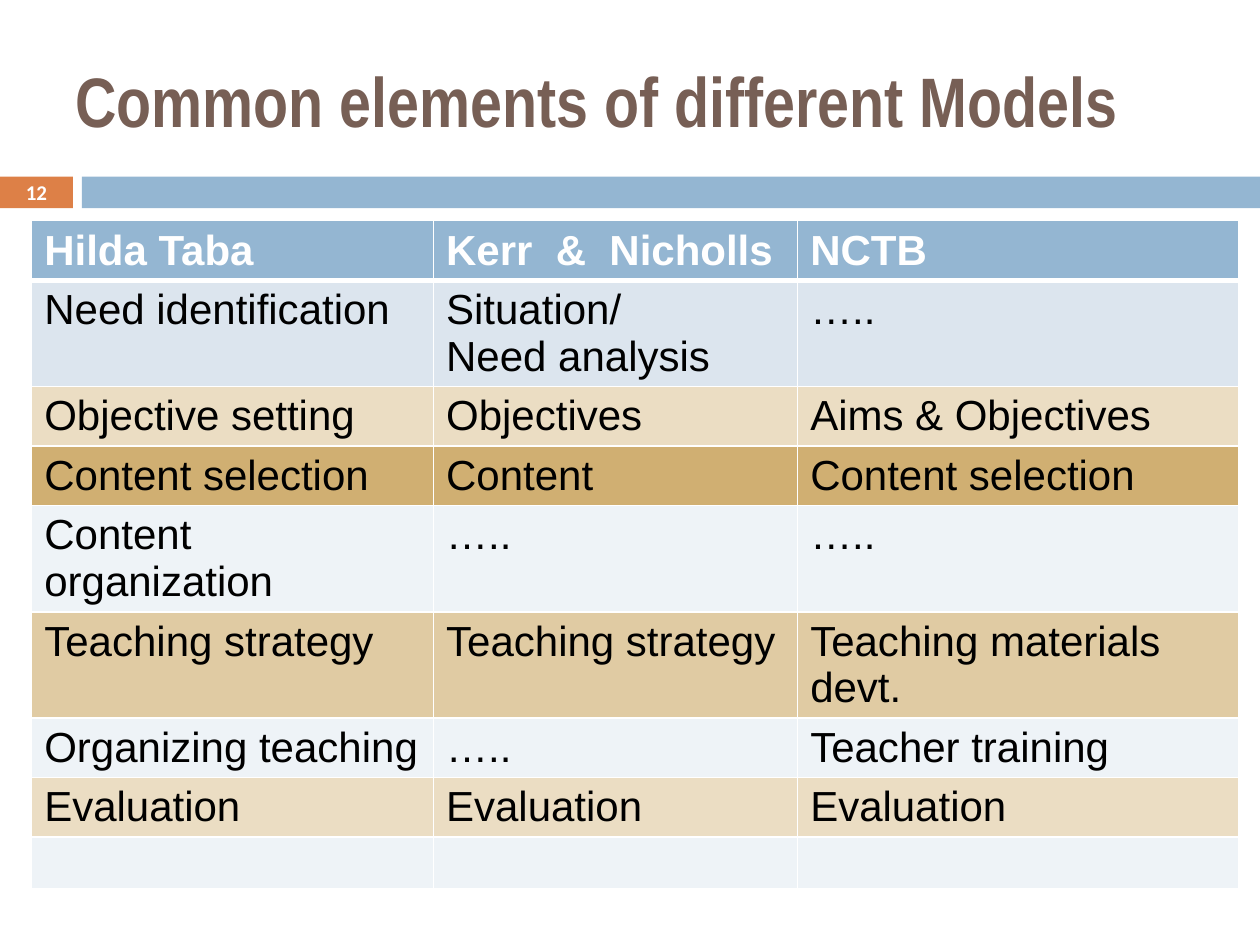
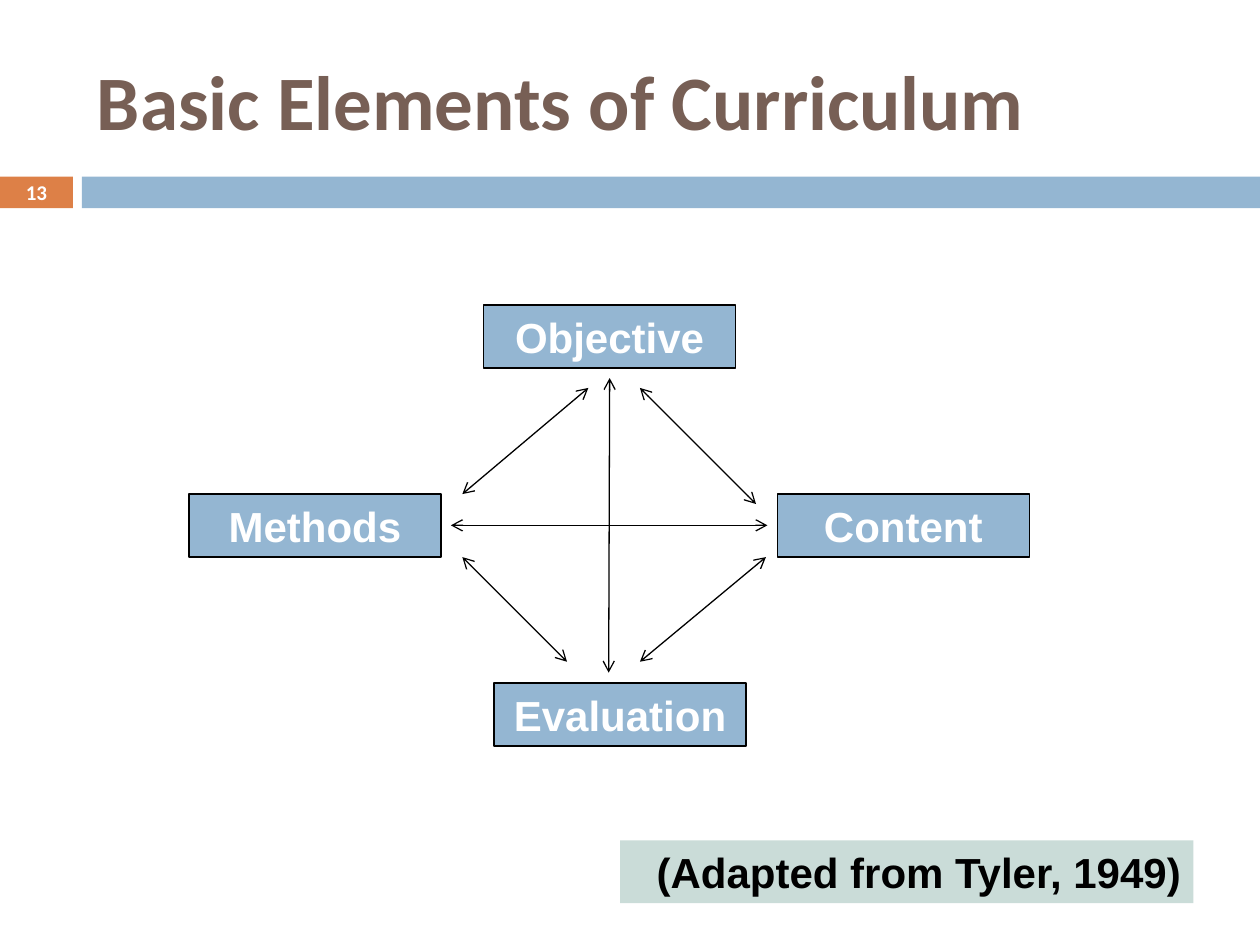
from dataclasses import dataclass
from typing import NamedTuple

from lxml.etree import SubElement
from pptx import Presentation
from pptx.dml.color import RGBColor
from pptx.enum.shapes import MSO_CONNECTOR, MSO_SHAPE
from pptx.enum.text import MSO_ANCHOR, MSO_AUTO_SIZE, PP_ALIGN
from pptx.oxml.ns import qn
from pptx.slide import Slide
from pptx.util import Cm, Pt


@dataclass(frozen=True)
class Theme:
    blue: str = "94B6D2"
    orange: str = "DD8047"
    brown: str = "775F55"
    mint: str = "CADCD8"
    mist: str = "DCE5EE"
    pale: str = "EEF3F7"
    sand: str = "EBDDC3"
    tan: str = "E0CBA3"
    gold: str = "D0AF72"
    white: str = "FFFFFF"
    black: str = "000000"
    text: str = "Arial"
    head: str = "Calibri"
    narrow: str = "Arial Narrow"
    body: int = 24
    small: int = 12
    thin: float = 0.75


THEME = Theme()


class Box(NamedTuple):
    """Left, top, width and height in centimetres."""
    left: float
    top: float
    width: float
    height: float


class Node(NamedTuple):
    label: str
    left: float
    top: float


class Arrow(NamedTuple):
    x1: float
    y1: float
    x2: float
    y2: float


class Row(NamedTuple):
    fill: str
    cells: tuple[str, str, str]


WIDE, HIGH = 25.4, 19.05
BAND_TOP, BAND_HIGH = 3.56, 0.64
TAG_WIDE, BAND_LEFT = 1.47, 1.65
NODE_WIDE, NODE_HIGH = 5.08, 1.27

# Table: the columns and the rows with their fills
TABLE = Box(0.64, 4.45, 24.33, 9.36)
COLUMNS = (8.1, 7.34, 8.89)
ROWS = (
    Row(THEME.blue, ("Hilda Taba", "Kerr  &  Nicholls", "NCTB")),
    Row(THEME.mist, ("Need identification", "Situation/\vNeed analysis", "…..")),
    Row(THEME.sand, ("Objective setting", "Objectives", "Aims & Objectives")),
    Row(THEME.gold, ("Content selection", "Content", "Content selection")),
    Row(THEME.pale, ("Content organization", "…..", "…..")),
    Row(THEME.tan, ("Teaching strategy", "Teaching strategy",
                    "Teaching materials devt.")),
    Row(THEME.pale, ("Organizing teaching", "…..", "Teacher training")),
    Row(THEME.sand, ("Evaluation", "Evaluation", "Evaluation")),
    Row(THEME.pale, ("", "", "")),
)

# Diagram: the four elements and the links between them
NODES = (
    Node("Objective", 9.75, 6.15),
    Node("Evaluation", 9.96, 13.77),
    Node("Content", 15.67, 9.96),
    Node("Methods", 3.81, 9.96),
)
ARROWS = (
    Arrow(12.29, 7.62, 12.27, 13.56),
    Arrow(15.47, 10.59, 9.09, 10.59),
    Arrow(12.9, 7.82, 15.24, 10.16),
    Arrow(9.32, 11.23, 11.43, 13.34),
    Arrow(9.32, 9.96, 11.86, 7.82),
    Arrow(12.9, 13.34, 15.44, 11.23),
)


def rgb(tint: str) -> RGBColor:
    return RGBColor.from_string(tint)


def style(para, size: float, tint: str, face: str = THEME.text,
          bold: bool = True, align=PP_ALIGN.LEFT) -> None:
    para.alignment = align
    font = para.font
    font.name, font.size, font.bold = face, Pt(size), bold
    font.color.rgb = rgb(tint)


def block(slide: Slide, box: Box, fill: str, line: str | None = None):
    """Add a flat rectangle, with an outline only when a line colour is given."""
    shape = slide.shapes.add_shape(MSO_SHAPE.RECTANGLE, *map(Cm, box))
    shape.shadow.inherit = False
    shape.fill.solid()
    shape.fill.fore_color.rgb = rgb(fill)
    if line:
        shape.line.color.rgb = rgb(line)
        shape.line.width = Pt(THEME.thin)
    else:
        shape.line.fill.background()
    return shape


def label(shape, text: str, tint: str, align, size: float = THEME.body,
          face: str = THEME.text, anchor=MSO_ANCHOR.TOP) -> None:
    frame = shape.text_frame
    frame.word_wrap = True
    frame.vertical_anchor = anchor
    frame.text = text
    style(frame.paragraphs[0], size, tint, face, align=align)


def start(deck, title: str, number: int, box: Box, face: str, size: int) -> Slide:
    """Add a slide with its title, band and number tag."""
    slide = deck.slides.add_slide(deck.slide_layouts[5])
    head = slide.shapes.title
    head.left, head.top, head.width, head.height = map(Cm, box)
    label(head, title, THEME.brown, PP_ALIGN.LEFT, size, face, MSO_ANCHOR.MIDDLE)
    head.text_frame.auto_size = MSO_AUTO_SIZE.NONE

    block(slide, Box(BAND_LEFT, BAND_TOP, WIDE - BAND_LEFT, BAND_HIGH), THEME.blue)
    tag = block(slide, Box(0, BAND_TOP, TAG_WIDE, BAND_HIGH), THEME.orange)
    label(tag, str(number), THEME.white, PP_ALIGN.CENTER, THEME.small,
          THEME.head, MSO_ANCHOR.MIDDLE)
    return slide


def border(cell, side: str, width: float) -> None:
    edge = SubElement(cell._tc.get_or_add_tcPr(), qn(f"a:ln{side}"),
                      w=str(Pt(width)))
    fill = SubElement(edge, qn("a:solidFill"))
    SubElement(fill, qn("a:srgbClr"), val=THEME.white)


def grid(slide: Slide) -> None:
    table = slide.shapes.add_table(len(ROWS), len(COLUMNS), *map(Cm, TABLE)).table
    for column, width in zip(table.columns, COLUMNS):
        column.width = Cm(width)
    for y, row in enumerate(ROWS):
        table.rows[y].height = Cm(TABLE.height / len(ROWS))
        first = y == 0
        for x, text in enumerate(row.cells):
            cell = table.cell(y, x)
            # The rule under the header is thicker than the others
            for side in "LRTB":
                thick = (first and side == "B") or (y == 1 and side == "T")
                border(cell, side, 3 if thick else 1)
            cell.fill.solid()
            cell.fill.fore_color.rgb = rgb(row.fill)
            if text:
                cell.text = text
                style(cell.text_frame.paragraphs[0], THEME.body,
                      THEME.white if first else THEME.black, bold=first)


def link(slide: Slide, arrow: Arrow) -> None:
    """Add a line with an open arrowhead at both ends."""
    line = slide.shapes.add_connector(MSO_CONNECTOR.STRAIGHT, *map(Cm, arrow))
    line.line.color.rgb = rgb(THEME.black)
    line.line.width = Pt(THEME.thin)
    props = line._element.spPr
    for end in ("headEnd", "tailEnd"):
        SubElement(props.find(qn("a:ln")), qn(f"a:{end}"), type="arrow")
    SubElement(props, qn("a:effectLst"))


def main() -> None:
    deck = Presentation()
    deck.slide_width, deck.slide_height = Cm(WIDE), Cm(HIGH)

    # Table of models
    slide = start(deck, "Common elements of different Models", 12,
                  Box(1.27, 0.64, 23.5, 2.74), THEME.narrow, 40)
    grid(slide)

    # Diagram of elements
    slide = start(deck, "Basic Elements of Curriculum", 13,
                  Box(1.7, 0.64, 22.66, 2.74), THEME.head, 44)
    for arrow in ARROWS:
        link(slide, arrow)
    for node in NODES:
        box = Box(node.left, node.top, NODE_WIDE, NODE_HIGH)
        label(block(slide, box, THEME.blue, THEME.black), node.label,
              THEME.white, PP_ALIGN.CENTER)
    credit = block(slide, Box(12.5, 16.94, 11.56, 1.27), THEME.mint)
    label(credit, "(Adapted from Tyler, 1949)", THEME.black, PP_ALIGN.RIGHT)

    deck.save("out.pptx")


if __name__ == "__main__":
    main()
